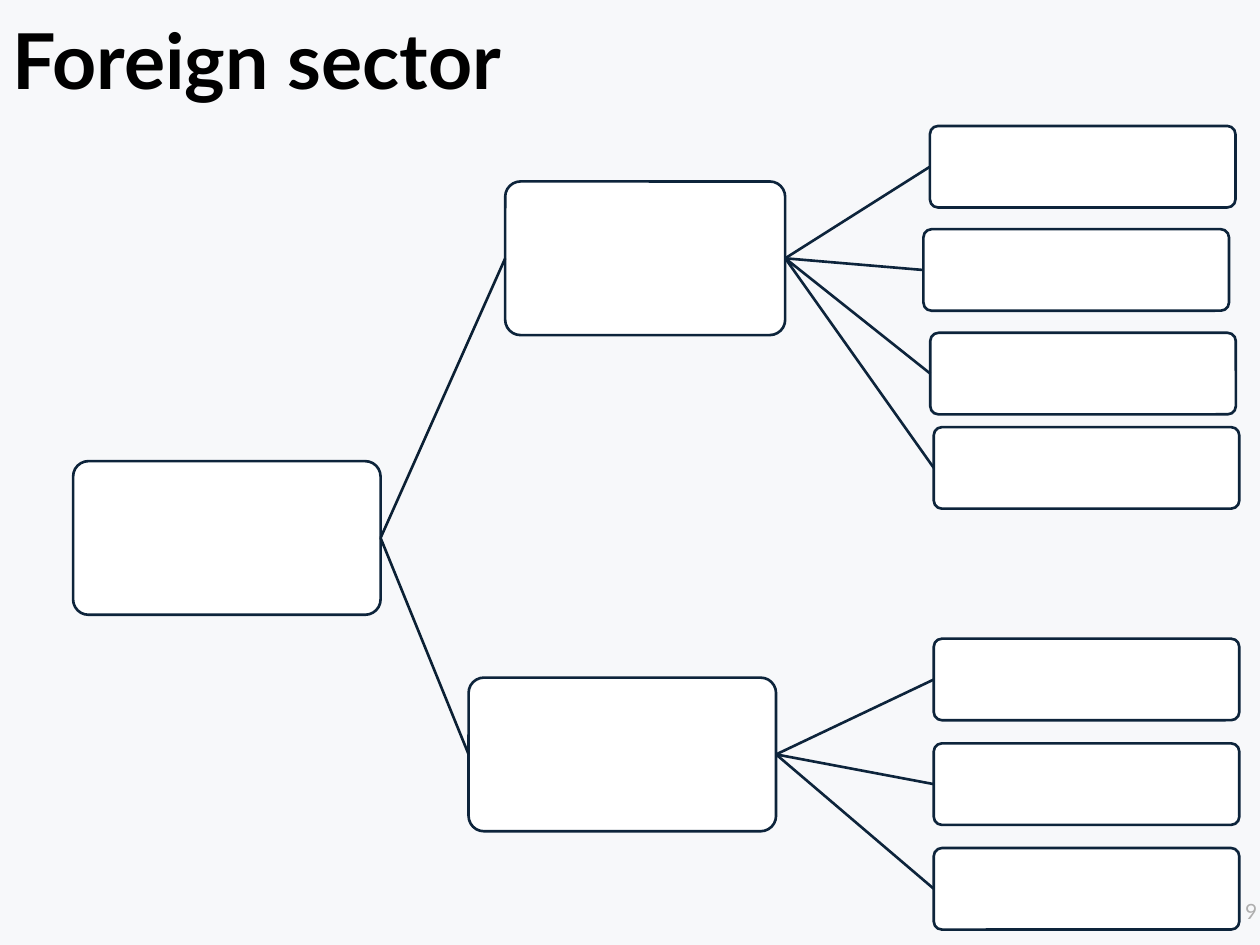
import pptx
import pptx.util
import pptx.dml.color
import pptx.enum.shapes
import pptx.enum.text
import pptx.oxml.ns
from lxml import etree

Pt = pptx.util.Pt
RGB = pptx.dml.color.RGBColor.from_string
ALIGN = pptx.enum.text.PP_ALIGN

# Content: each box is (left, top) in points; leaves belong to their branch
TITLE = "Foreign sector"
PAGE_NUMBER = "9"
ROOT = (41.8, 263.5)
BRANCHES = [
    {"at": (288.7, 103.7), "width": 160,
     "leaves": [(531.4, 72), (527.7, 131), (531.6, 190.2), (533.6, 244.1)]},
    {"at": (267.8, 387.2), "width": 175.7,
     "leaves": [(533.6, 365), (533.6, 424.8), (533.6, 484.6)]},
]

THEME = {
    "background": "F7F8FA", "box": "FFFFFF", "outline": "0D243B",
    "trunk": "0B2034", "line_width": 1.5, "corner": 0.1,
    "title": {"name": "Lato", "size": Pt(44), "bold": True, "color": "000000"},
    "number": {"name": "Lato", "size": Pt(12), "bold": False, "color": "AEAEAE"},
}
SLIDE_SIZE = (720, 540)
NODE_SIZE = (175.7, 87.8)
LEAF_SIZE = (174.6, 46.6)

deck = pptx.Presentation()
deck.slide_width, deck.slide_height = map(Pt, SLIDE_SIZE)
slide = deck.slides.add_slide(deck.slide_layouts[6])
slide.background.fill.solid()
slide.background.fill.fore_color.rgb = RGB(THEME["background"])


def add_label(text, bounds, style, alignment, line_spacing=1.0, right_inset=7.2):
    frame = slide.shapes.add_textbox(*map(Pt, bounds)).text_frame
    frame.word_wrap = True
    frame.margin_right = Pt(right_inset)
    frame.vertical_anchor = pptx.enum.text.MSO_ANCHOR.MIDDLE
    paragraph = frame.paragraphs[0]
    paragraph.alignment = alignment
    paragraph.line_spacing = line_spacing
    run = paragraph.add_run()
    run.text = text
    for key, value in style.items():
        if key == "color":
            run.font.color.rgb = RGB(value)
        else:
            setattr(run.font, key, value)


def add_box(at, size):
    """Draw a box; return the middles of its left and right sides."""
    (left, top), (width, height) = at, size
    box = slide.shapes.add_shape(
        pptx.enum.shapes.MSO_SHAPE.ROUNDED_RECTANGLE,
        *map(Pt, (left, top, width, height)))
    box.adjustments[0] = THEME["corner"]
    box.shadow.inherit = False
    box.fill.solid()
    box.fill.fore_color.rgb = RGB(THEME["box"])
    box.line.color.rgb = RGB(THEME["outline"])
    box.line.width = Pt(THEME["line_width"])
    middle = top + height / 2
    return (left, middle), (left + width, middle)


def add_link(start, end, color):
    link = slide.shapes.add_connector(
        pptx.enum.shapes.MSO_CONNECTOR.STRAIGHT, *map(Pt, start + end))
    link.line.color.rgb = RGB(color)
    link.line.width = Pt(THEME["line_width"])
    etree.SubElement(link._element.spPr, pptx.oxml.ns.qn("a:effectLst"))


# Title
add_label(TITLE, (0, 1.4, 720, 70.6), THEME["title"], ALIGN.LEFT, 0.9)

# Tree: root, branches, leaves
_, root_exit = add_box(ROOT, NODE_SIZE)
for branch in BRANCHES:
    branch_entry, branch_exit = add_box(
        branch["at"], (branch["width"], NODE_SIZE[1]))
    add_link(root_exit, branch_entry, THEME["trunk"])
    for leaf in branch["leaves"]:
        leaf_entry, _ = add_box(leaf, LEAF_SIZE)
        add_link(branch_exit, leaf_entry, THEME["outline"])

# Page number, in the strip between the last leaf and the slide edge
add_label(PAGE_NUMBER, (684, 506.2, 36, 28.8), THEME["number"], ALIGN.RIGHT,
          right_inset=1.5)

deck.save("out.pptx")
